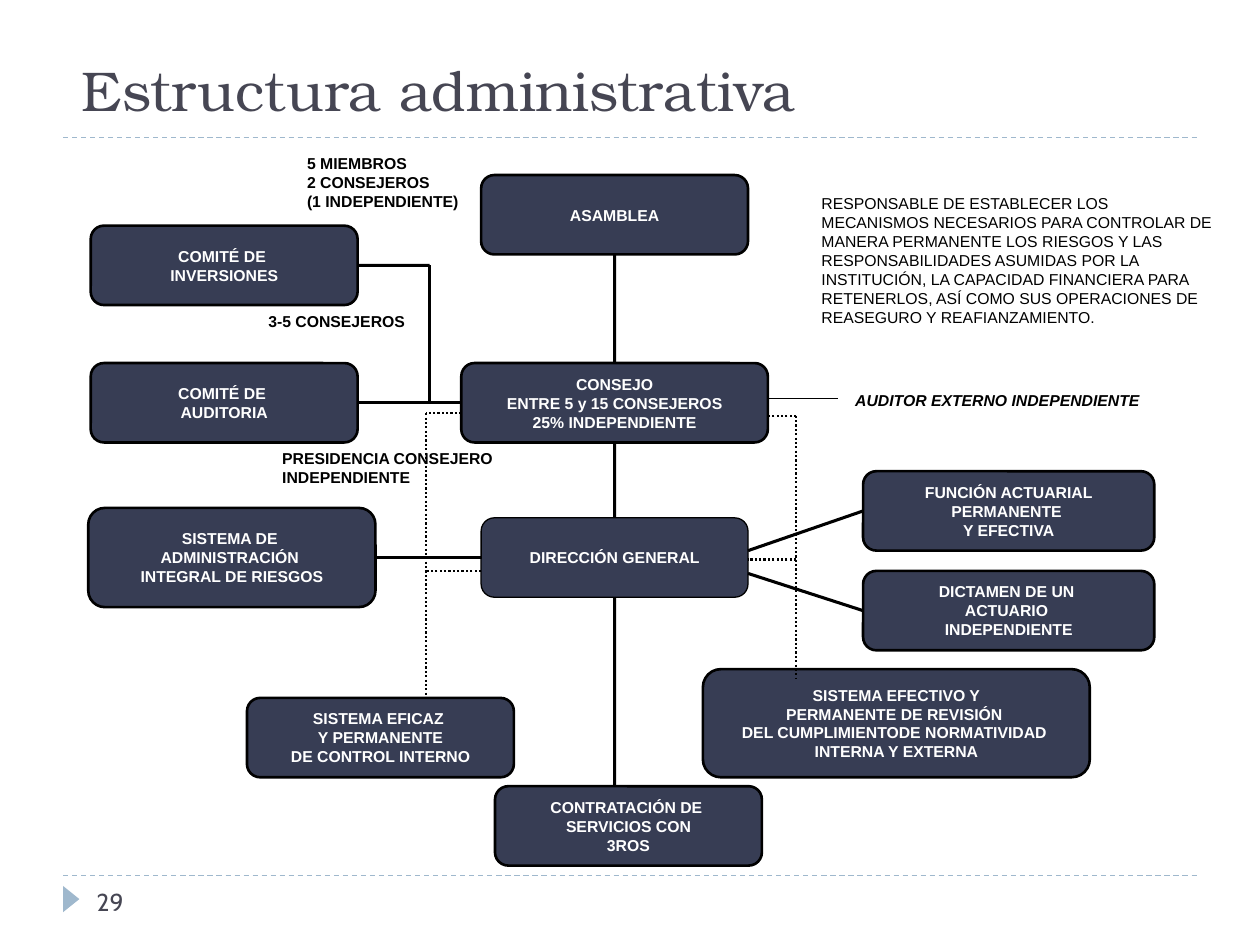
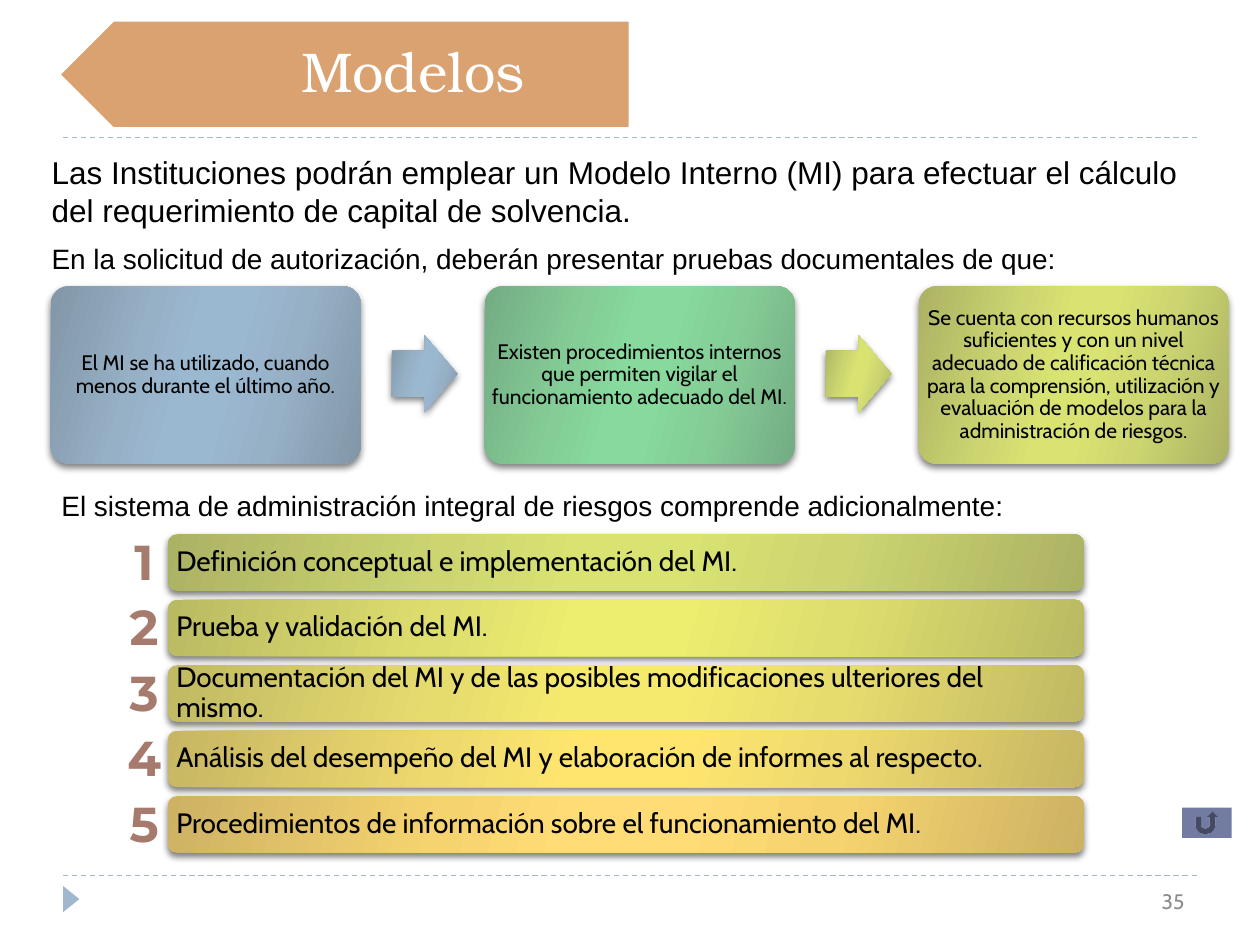
import pptx
import pptx.dml.color
import pptx.enum.dml
import pptx.enum.shapes
import pptx.enum.text
import pptx.oxml.ns
import pptx.util
from lxml import etree

Cm = pptx.util.Cm
Pt = pptx.util.Pt
qn = pptx.oxml.ns.qn
Shape = pptx.enum.shapes.MSO_SHAPE
Line = pptx.enum.shapes.MSO_CONNECTOR
Dash = pptx.enum.dml.MSO_LINE
Align = pptx.enum.text.PP_ALIGN
Anchor = pptx.enum.text.MSO_ANCHOR

SERIF, SANS, BODY, HEAVY = "TeX Gyre Bonum", "Arial", "Cabin", "Montserrat"
BLACK, WHITE, INK, NAVY, SKY = "000000", "FFFFFF", "464653", "373D54", "9FB8CD"
TOP, LEFT, BOTTOM, RIGHT = range(4)

BLUE = ("8297A8", "96B0C6", "9BB8D1")
GREEN = ("74AC83", "84CD97", "87D99D")
LIME = ("ACB264", "CCD570", "D9E371")

CARDS = [
    (BLUE, "El MI se ha utilizado, cuando menos durante el último año."),
    (GREEN, "Existen procedimientos internos que permiten vigilar el "
            "funcionamiento adecuado del MI."),
    (LIME, "Se cuenta con recursos humanos suficientes y con un nivel adecuado "
           "de calificación técnica para la comprensión, utilización y "
           "evaluación de modelos para la administración de riesgos."),
]
ROWS = [
    (LIME, "Definición conceptual e implementación del MI."),
    (("BABA63", "DEDE6E", "EDED6F"), "Prueba y validación del MI."),
    (("C1B963", "E6DC6E", "F6EA6E"),
     "Documentación del MI y de las posibles modificaciones ulteriores del mismo."),
    (("C7B663", "EED96E", "FEE66E"),
     "Análisis del desempeño del MI y elaboración de informes al respecto."),
    (("CDB264", "F5D36E", "FFDC75"),
     "Procedimientos de información sobre el funcionamiento del MI."),
]


def rgb(code):
    return pptx.dml.color.RGBColor.from_string(code)


def write(shape, lines, size, font=SANS, tint=BLACK, bold=False, slant=False,
          align=Align.LEFT, anchor=Anchor.TOP, wrap=True, pad=None, lead=None):
    frame = shape.text_frame
    frame.word_wrap = wrap
    frame.vertical_anchor = anchor
    if pad is not None:
        frame.margin_left = frame.margin_right = Cm(pad)
        frame.margin_top = frame.margin_bottom = Cm(pad)
    for i, line in enumerate(lines):
        para = frame.paragraphs[0] if i == 0 else frame.add_paragraph()
        para.alignment = align
        if lead:
            para.line_spacing = lead
        run = para.add_run()
        run.text = line
        run.font.name = font
        run.font.size = Pt(size)
        run.font.bold = bold
        run.font.italic = slant
        run.font.color.rgb = rgb(tint)


def label(slide, x, y, w, h, lines, size, **style):
    box = slide.shapes.add_textbox(Cm(x), Cm(y), Cm(w), Cm(h))
    write(box, lines, size, **style)


def block(slide, kind, x, y, w, h, fill=None, edge=None, width=1.5):
    shape = slide.shapes.add_shape(kind, Cm(x), Cm(y), Cm(w), Cm(h))
    shape.shadow.inherit = False
    if fill:
        shape.fill.solid()
        shape.fill.fore_color.rgb = rgb(fill)
    if edge:
        shape.line.color.rgb = rgb(edge)
        shape.line.width = Pt(width)
    else:
        shape.line.fill.background()
    return shape


def stain(parent, code, **more):
    node = etree.SubElement(parent, qn("a:srgbClr"), val=code)
    for name, val in more.items():
        etree.SubElement(node, qn("a:" + name), val=str(val))


def glossy(slide, kind, x, y, w, h, tints):
    shape = block(slide, kind, x, y, w, h)
    shape.fill.gradient()
    props = shape._element.spPr
    grad = props.find(qn("a:gradFill"))
    grad.clear()
    stops = etree.SubElement(grad, qn("a:gsLst"))
    rim, mid, core = tints
    for spot, code in zip((0, 30, 45, 55, 73, 100), (rim, mid, core, core, mid, rim)):
        stain(etree.SubElement(stops, qn("a:gs"), pos=str(spot * 1000)), code)
    etree.SubElement(grad, qn("a:lin"), ang=str(16 * 60000), scaled="0")
    glow = etree.SubElement(props.find(qn("a:effectLst")), qn("a:outerShdw"),
                            blurRad=str(Pt(4)), dist=str(Pt(2)),
                            dir=str(90 * 60000), rotWithShape="0")
    stain(glow, BLACK, alpha=50000)
    return shape


def link(slide, start, end, width=1.75, tint=BLACK, dash=None):
    def spot(stop):
        return (0, 0) if hasattr(stop[0], "shape_id") else map(Cm, stop)

    line = slide.shapes.add_connector(Line.STRAIGHT, *spot(start), *spot(end))
    if hasattr(start[0], "shape_id"):
        line.begin_connect(*start)
    if hasattr(end[0], "shape_id"):
        line.end_connect(*end)
    line.line.color.rgb = rgb(tint)
    line.line.width = Pt(width)
    if dash:
        line.line.dash_style = dash
    etree.SubElement(line._element.spPr, qn("a:effectLst"))


def dots(slide, start, end):
    link(slide, start, end, 1.25, dash=Dash.ROUND_DOT)


def node(slide, x, y, lines, w=5.38, h=1.6, width=1.5):
    shape = block(slide, Shape.ROUNDED_RECTANGLE, x, y, w, h, NAVY, BLACK, width)
    write(shape, lines, 9, tint=WHITE, bold=True, align=Align.CENTER,
          anchor=Anchor.MIDDLE, wrap=False)
    return shape


def base(deck):
    slide = deck.slides.add_slide(deck.slide_layouts[6])
    for y in (17.65, 2.77):
        link(slide, (1.27, y), (24.13, y), 0.75, SKY, Dash.DASH)
    mark = block(slide, Shape.ISOSCELES_TRIANGLE, 1.17, 17.96, 0.53, 0.33, SKY)
    mark.rotation = 90
    return slide


def chart(deck):
    slide = base(deck)
    label(slide, 1.4, 0, 22.86, 2.59, ["Estructura administrativa"], 32,
          font=SERIF, tint=INK, anchor=Anchor.BOTTOM)

    risk = node(slide, 1.78, 10.24,
                ["SISTEMA DE ", "ADMINISTRACIÓN ", "INTEGRAL DE RIESGOS"], 5.79, 2)
    chief = node(slide, 9.7, 10.44, ["DIRECCIÓN GENERAL"], width=0.75)
    node(slide, 4.98, 14.07, ["SISTEMA EFICAZ ", "Y PERMANENTE", "DE CONTROL INTERNO"])
    owners = node(slide, 9.7, 3.53, ["ASAMBLEA"])
    node(slide, 9.98, 15.85, ["CONTRATACIÓN DE ", "SERVICIOS CON", "3ROS"])
    board = node(slide, 9.3, 7.32,
                 ["CONSEJO", "ENTRE 5 y 15 CONSEJEROS", "25% INDEPENDIENTE"], 6.18)
    node(slide, 14.17, 13.49,
         ["SISTEMA EFECTIVO Y", "PERMANENTE DE REVISIÓN ",
          "DEL CUMPLIMIENTODE NORMATIVIDAD ", "INTERNA Y EXTERNA"], 7.8, 2.18)
    role = node(slide, 17.4, 9.5, ["FUNCIÓN ACTUARIAL", "PERMANENTE ", "Y EFECTIVA"], 5.87)
    proof = node(slide, 17.4, 11.51, ["DICTAMEN DE UN ", "ACTUARIO ", "INDEPENDIENTE"], 5.87)
    audit = node(slide, 1.83, 7.32, ["COMITÉ DE ", "AUDITORIA"])
    funds = node(slide, 1.83, 4.55, ["COMITÉ DE ", "INVERSIONES"])

    link(slide, (owners, BOTTOM), (board, TOP))
    link(slide, (board, BOTTOM), (chief, TOP))
    link(slide, (chief, BOTTOM), (12.39, 15.85))
    link(slide, (board, LEFT), (audit, RIGHT))
    link(slide, (chief, LEFT), (risk, RIGHT))
    link(slide, (role, LEFT), (15.08, 11.1))
    link(slide, (proof, LEFT), (15.08, 11.56))
    link(slide, (funds, RIGHT), (8.66, 5.35))
    link(slide, (8.66, 8.12), (8.66, 5.35))
    link(slide, (15.48, 8.03), (16.89, 8.03), 0.75)

    dots(slide, (16.05, 11.28), (15.08, 11.28))
    dots(slide, (16.05, 8.38), (15.48, 8.38))
    dots(slide, (16.05, 8.38), (16.05, 13.69))
    dots(slide, (8.59, 8.33), (8.59, 14.07))
    dots(slide, (9.7, 11.51), (8.59, 11.51))
    dots(slide, (9.3, 8.33), (8.59, 8.33))

    label(slide, 5.94, 2.97, 4.6, 1.42,
          ["5 MIEMBROS", "2 CONSEJEROS", "(1 INDEPENDIENTE)"], 9, bold=True)
    label(slide, 5.16, 6.15, 3.3, 0.64, ["3-5 CONSEJEROS"], 9, bold=True, wrap=False)
    label(slide, 5.44, 8.92, 4.8, 1.02,
          ["PRESIDENCIA CONSEJERO", "INDEPENDIENTE"], 9, bold=True, wrap=False)
    label(slide, 16.99, 7.75, 6.3, 0.64, ["AUDITOR EXTERNO INDEPENDIENTE"], 9,
          bold=True, slant=True, wrap=False)
    label(slide, 16.31, 3.78, 8.41, 2.95,
          ["RESPONSABLE DE ESTABLECER LOS MECANISMOS NECESARIOS PARA CONTROLAR DE "
           "MANERA PERMANENTE LOS RIESGOS Y LAS RESPONSABILIDADES ASUMIDAS POR LA "
           "INSTITUCIÓN, LA CAPACIDAD FINANCIERA PARA RETENERLOS, ASÍ COMO SUS "
           "OPERACIONES DE REASEGURO Y REAFIANZAMIENTO."], 9)
    label(slide, 1.7, 17.75, 5.51, 1.02, ["29"], 14, font=BODY, tint=INK)


def models(deck):
    slide = base(deck)
    label(slide, 18.21, 17.65, 5.92, 1.02, ["35"], 12, font=BODY, tint="8C8C8C",
          align=Align.RIGHT, anchor=Anchor.MIDDLE)
    block(slide, Shape.ACTION_BUTTON_RETURN, 23.83, 16.28, 1, 0.61, "727CA3")
    flag = block(slide, Shape.PENTAGON, 1.19, 0.41, 11.51, 2.18, "DAA270", WHITE)
    flag.rotation = 180
    label(slide, 3.96, 0.41, 8.74, 2.18, ["Modelos"], 32, font=SERIF, tint=WHITE,
          align=Align.CENTER, anchor=Anchor.MIDDLE, lead=0.9)

    label(slide, 0.79, 2.97, 23.83, 1.8,
          ["Las Instituciones podrán emplear un Modelo Interno (MI) para efectuar el "
           "cálculo del requerimiento de capital de solvencia."], 18)
    label(slide, 0.79, 4.75, 23.62, 0.94,
          ["En la solicitud de autorización, deberán presentar pruebas "
           "documentales de que:"], 16)
    for i, (tints, words) in enumerate(CARDS):
        card = glossy(slide, Shape.ROUNDED_RECTANGLE, 1.02 + 8.75 * i, 5.77,
                      6.25, 3.58, tints)
        card.adjustments[0] = 0.1
        write(card, [words], 12, font=BODY, align=Align.CENTER,
              anchor=Anchor.MIDDLE, pad=0.03, lead=0.9)
    for i, tints in enumerate((BLUE, LIME)):
        arrow = glossy(slide, Shape.RIGHT_ARROW, 7.9 + 8.75 * i, 6.76, 1.32, 1.55, tints)
        arrow.adjustments[0] = 0.6

    label(slide, 0.99, 9.73, 23.22, 0.94,
          ["El sistema de administración integral de riesgos comprende "
           "adicionalmente:"], 16)
    for i, (tints, words) in enumerate(ROWS):
        drop = 1.32 * i
        row = glossy(slide, Shape.ROUNDED_RECTANGLE, 3.38, 10.77 + drop,
                     18.47, 1.14, tints)
        write(row, [words], 16, font=BODY, anchor=Anchor.MIDDLE, pad=0.12, lead=0.9)
        label(slide, 2.32, 10.59 + drop, 1.17, 1.45, [str(i + 1)], 28, font=HEAVY,
              tint="A67B6E", bold=True, align=Align.CENTER, wrap=False)


def main():
    deck = pptx.Presentation()
    deck.slide_width = Cm(25.4)
    deck.slide_height = Cm(19.05)
    chart(deck)
    models(deck)
    deck.save("out.pptx")


if __name__ == "__main__":
    main()
